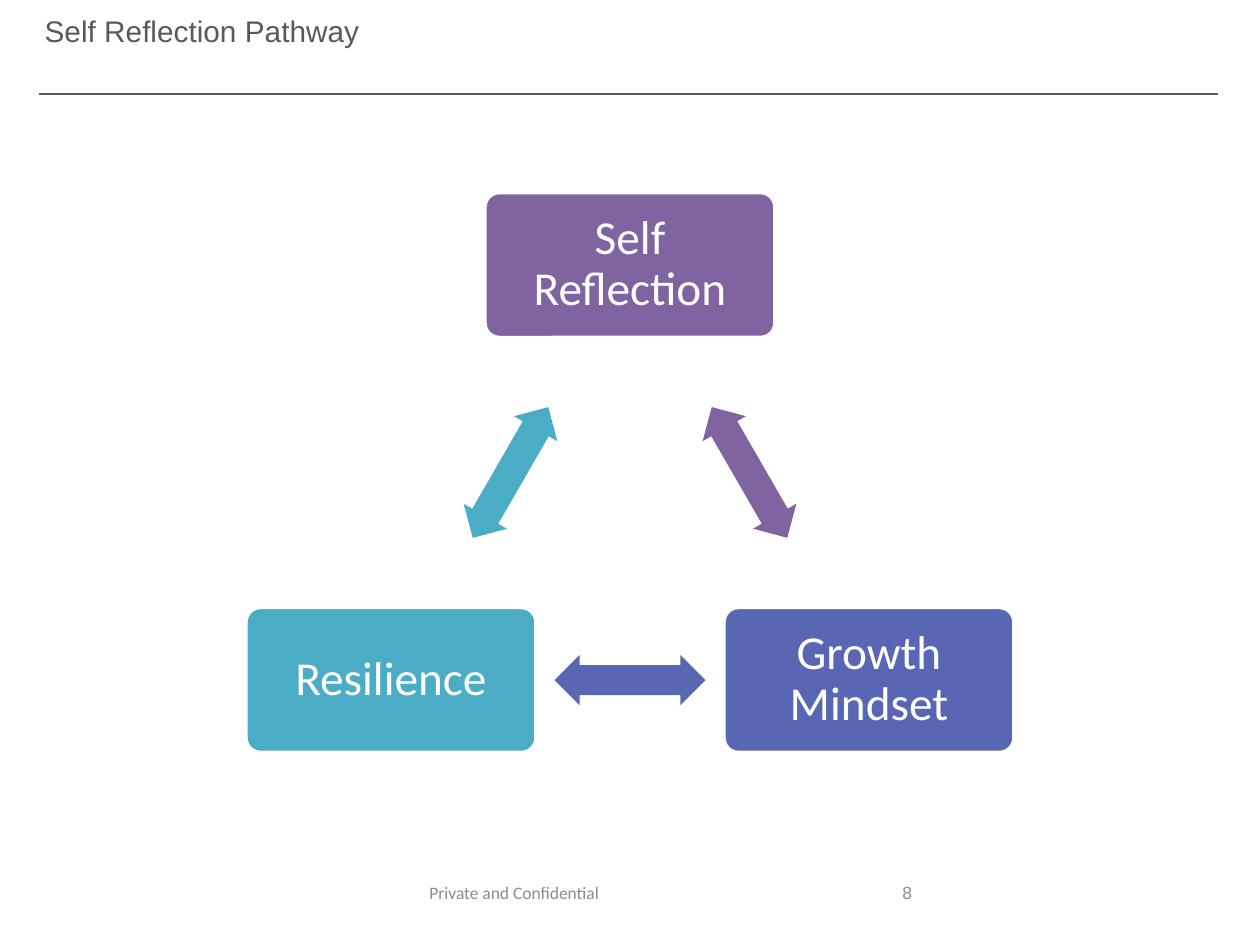
from lxml.etree import SubElement
from pptx import Presentation
from pptx.dml.color import RGBColor
from pptx.enum.shapes import MSO_CONNECTOR, MSO_SHAPE
from pptx.enum.text import MSO_ANCHOR, MSO_AUTO_SIZE, PP_ALIGN
from pptx.oxml.ns import qn
from pptx.util import Pt

SCALE = 914400 / 126
WHITE = RGBColor(0xFF, 0xFF, 0xFF)
DARK = RGBColor(0x59, 0x59, 0x59)
GREY = RGBColor(0x8C, 0x8C, 0x8C)
PURPLE = RGBColor(0x80, 0x64, 0xA2)
BLUE = RGBColor(0x57, 0x67, 0xB4)
TEAL = RGBColor(0x4B, 0xAC, 0xC6)


def emu(*sizes):
    return [round(size * SCALE) for size in sizes]


class Page:
    node_size = 290, 145
    arrow_size = 151, 50

    def __init__(self, slide):
        self.slide = slide
        self.shapes = slide.shapes

    def set_text(self, shape, text, size, font, color, align=PP_ALIGN.LEFT, anchor=MSO_ANCHOR.TOP):
        frame = shape.text_frame
        frame.text = text
        frame.word_wrap = True
        frame.auto_size = MSO_AUTO_SIZE.NONE
        frame.vertical_anchor = anchor
        para = frame.paragraphs[0]
        para.alignment = align
        style = para.runs[0].font
        style.size = Pt(size)
        style.name = font
        style.color.rgb = color
        return frame

    def title(self, text, *box):
        shape = self.shapes.title
        shape.left, shape.top, shape.width, shape.height = emu(*box)
        self.set_text(shape, text, 17, "Arial", DARK)

    def label(self, text, font, *box):
        shape = self.shapes.add_textbox(*emu(*box))
        self.set_text(shape, text, 10, font, GREY)

    def rule(self, *ends):
        line = self.shapes.add_connector(MSO_CONNECTOR.STRAIGHT, *emu(*ends))
        line.line.color.rgb = DARK
        line.line.width = Pt(0.75)
        SubElement(line._element.spPr, qn("a:effectLst"))

    def block(self, kind, center, size, color):
        (x, y), (width, height) = center, size
        box = emu(x - width / 2, y - height / 2, width, height)
        shape = self.shapes.add_shape(kind, *box)
        shape.shadow.inherit = False
        shape.fill.solid()
        shape.fill.fore_color.rgb = color
        return shape

    def node(self, text, center, color):
        shape = self.block(MSO_SHAPE.ROUNDED_RECTANGLE, center, self.node_size, color)
        shape.adjustments[0] = 0.1
        shape.line.color.rgb = WHITE
        shape.line.width = Pt(2)
        frame = self.set_text(shape, text, 27, "Calibri", WHITE, PP_ALIGN.CENTER, MSO_ANCHOR.MIDDLE)
        frame.paragraphs[0].line_spacing = 0.9
        inset, = emu(18)
        frame.margin_left = frame.margin_right = inset
        frame.margin_top = frame.margin_bottom = inset

    def arrow(self, start, end, turn, color):
        center = [(a + b) / 2 for a, b in zip(start, end)]
        shape = self.block(MSO_SHAPE.LEFT_RIGHT_ARROW, center, self.arrow_size, color)
        shape.adjustments[0] = 0.6
        shape.adjustments[1] = 0.5
        shape.line.fill.background()
        shape.rotation = turn


def main():
    deck = Presentation()
    deck.slide_width, deck.slide_height = emu(1260, 945)
    page = Page(deck.slides.add_slide(deck.slide_layouts[5]))
    page.rule(39, 94, 1218, 94)
    page.title("Self Reflection Pathway", 32, 6, 1191, 122)
    page.label("Private and Confidential", "Calibri", 417, 876, 426, 50)
    page.label("8", "Arial", 890, 876, 284, 50)

    nodes = [
        ("Self Reflection", (630, 265), PURPLE),
        ("Growth Mindset", (869, 680), BLUE),
        ("Resilience", (391, 680), TEAL),
    ]
    for i, (text, center, color) in enumerate(nodes):
        follow = nodes[(i + 1) % len(nodes)][1]
        page.node(text, center, color)
        page.arrow(center, follow, 60 + 120 * i, color)
    deck.save("out.pptx")


if __name__ == "__main__":
    main()
